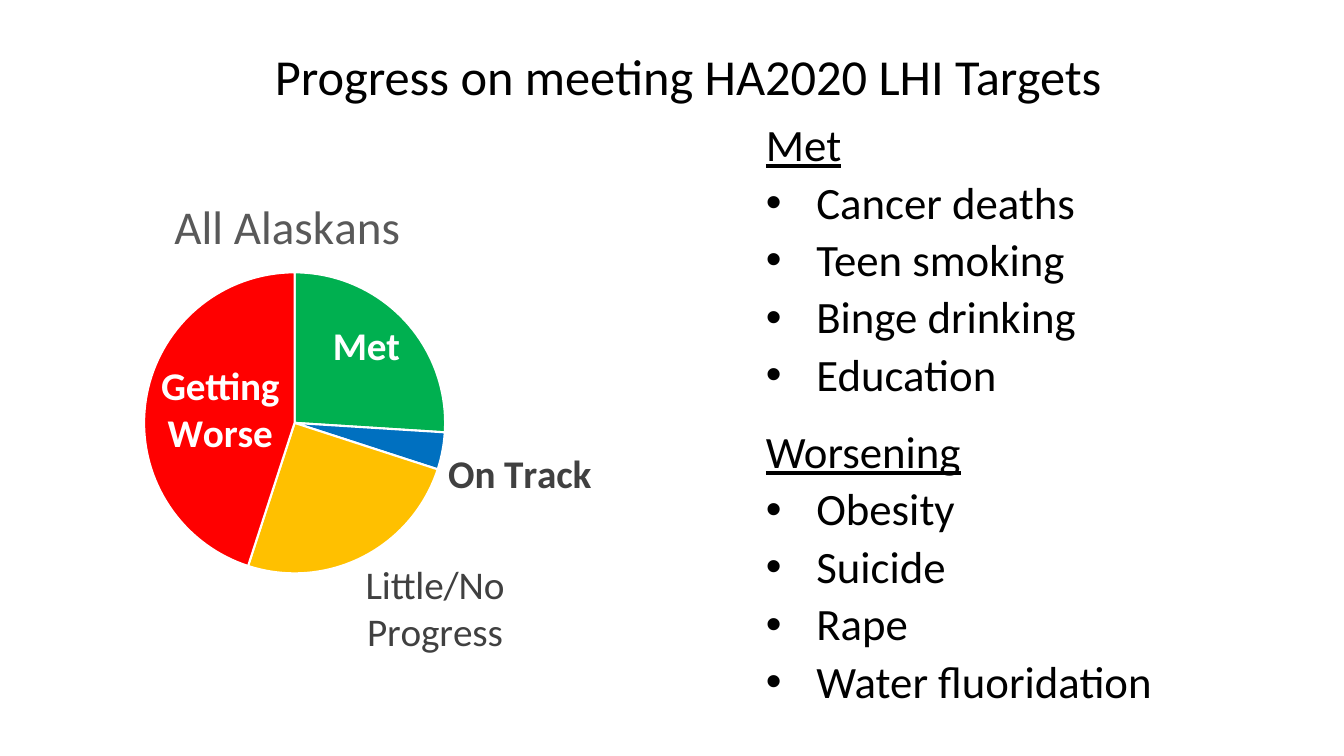
from lxml import etree
from pptx import Presentation
from pptx.chart.data import CategoryChartData
from pptx.dml.color import RGBColor
from pptx.enum.chart import XL_CHART_TYPE, XL_LABEL_POSITION
from pptx.enum.text import MSO_ANCHOR, PP_ALIGN
from pptx.oxml import parse_xml
from pptx.oxml.ns import nsdecls, qn
from pptx.util import Pt

PX = 914400 / 100.8
FONT = "Calibri"
BLACK = RGBColor(0x00, 0x00, 0x00)
WHITE = RGBColor(0xFF, 0xFF, 0xFF)
GRAY = RGBColor(0x59, 0x59, 0x59)
DARK = RGBColor(0x40, 0x40, 0x40)
GREEN = RGBColor(0x00, 0xB0, 0x50)
BLUE = RGBColor(0x00, 0x70, 0xC0)
AMBER = RGBColor(0xFF, 0xC0, 0x00)
RED = RGBColor(0xFF, 0x00, 0x00)


def px(*values):
    return [round(v * PX) for v in values]


def style(font, size, color, bold=False):
    font.name, font.size, font.bold = FONT, Pt(size), bold
    font.color.rgb = color


prs = Presentation()
prs.slide_width, prs.slide_height = px(1344, 756)
s = prs.slides.add_slide(prs.slide_layouts[5])

# Title
title = s.shapes.title
title.left, title.top, title.width, title.height = px(109, 6, 1159, 146)
tf = title.text_frame
tf.vertical_anchor = MSO_ANCHOR.MIDDLE
p = tf.paragraphs[0]
p.alignment, p.line_spacing = PP_ALIGN.CENTER, 0.9
r = p.add_run()
r.text = "Progress on meeting HA2020 LHI Targets"
style(r.font, 36, BLACK)

# Pie chart: category, value, slice, label colour, bold, label position
slices = [
    ("Met", 26, GREEN, WHITE, True, XL_LABEL_POSITION.INSIDE_END),
    ("On Track", 4, BLUE, DARK, True, XL_LABEL_POSITION.OUTSIDE_END),
    ("Little/No Progress", 25, AMBER, DARK, False, XL_LABEL_POSITION.OUTSIDE_END),
    ("Getting Worse", 45, RED, WHITE, True, XL_LABEL_POSITION.CENTER),
]
data = CategoryChartData()
data.categories = [row[0] for row in slices]
data.add_series("All Alaskans", [row[1] for row in slices])
chart = s.shapes.add_chart(XL_CHART_TYPE.PIE, *px(-99, 145, 757, 579), data).chart
style(chart.font, 28, BLACK)
chart.has_legend = False
chart.has_title = True
r = chart.chart_title.text_frame.paragraphs[0].add_run()
r.text = "All Alaskans"
style(r.font, 33.6, GRAY)

plot = chart.plots[0]
plot.vary_by_categories = True
series = plot.series[0]
labels = series.data_labels
style(labels.font, 28, DARK, True)
labels.show_category_name, labels.show_value = True, False
for i, (_, _, fill, color, bold, position) in enumerate(slices):
    point = series.points[i]
    point.format.fill.solid()
    point.format.fill.fore_color.rgb = fill
    point.format.line.color.rgb = WHITE
    point.format.line.width = Pt(1.5)
    style(point.data_label.font, 28, color, bold)
    point.data_label.position = position

# Point labels show the category name only
space = chart.element if hasattr(chart, "element") else chart._chartSpace
for label in space.iter(qn("c:dLbl")):
    label.find(qn("c:showVal")).set("val", "0")
    label.find(qn("c:showCatName")).set("val", "1")
    label.find(qn("c:showPercent")).set("val", "0")

# Fixed places for the chart title and the pie
for tag, after, box in [
    ("c:title", "c:tx", {"x": 0.35, "y": 0.07}),
    ("c:plotArea", None, {"x": 0.32, "y": 0.22, "w": 0.4, "h": 0.52}),
]:
    parent = next(space.iter(qn(tag)))
    for old in parent.findall(qn("c:layout")):
        parent.remove(old)
    layout = parse_xml(f"<c:layout {nsdecls('c')}><c:manualLayout/></c:layout>")
    modes = {"xMode": "edge", "yMode": "edge"}
    if "w" in box:
        modes = {"layoutTarget": "inner", **modes}
    for key, value in {**modes, **box}.items():
        etree.SubElement(layout[0], qn("c:" + key)).set("val", str(value))
    parent.insert(1 if after else 0, layout)

# Lists of met and worsening targets
groups = [
    ("Met", ["Cancer deaths", "Teen smoking", "Binge drinking", "Education"]),
    ("Worsening", ["Obesity", "Suicide", "Rape", "Water fluoridation"]),
]
tf = s.shapes.add_textbox(*px(756, 118, 664, 564)).text_frame
tf.word_wrap = True
for heading, items in groups:
    for text in [heading, *items]:
        is_heading = text == heading
        first = text == groups[0][0]
        p = tf.paragraphs[0] if first else tf.add_paragraph()
        p.line_spacing = 0.9
        p.space_before = Pt(0 if first else 20.7 if is_heading else 6.4)
        if not is_heading:
            pPr = p._p.get_or_add_pPr()
            pPr.set("marL", "457200")
            pPr.set("indent", "-457200")
            etree.SubElement(pPr, qn("a:buFont")).set("typeface", "Arial")
            etree.SubElement(pPr, qn("a:buChar")).set("char", "•")
        r = p.add_run()
        r.text = text
        style(r.font, 32, BLACK)
        r.font.underline = is_heading

prs.save("out.pptx")
